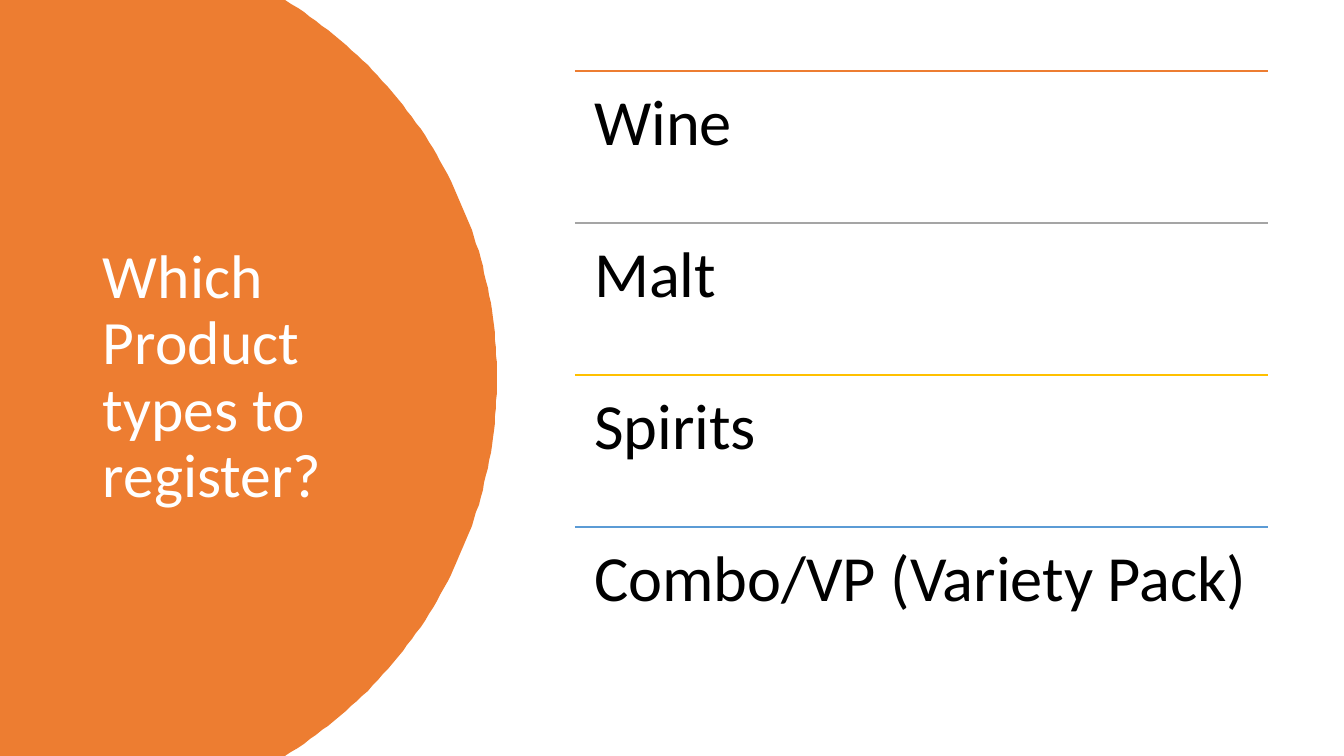
import math

import pptx
import pptx.dml.color
import pptx.enum.shapes
import pptx.enum.text
import pptx.oxml
import pptx.oxml.ns
import pptx.util

EMU_PER_PX = 914400 / 100.8
SLIDE_WIDTH, SLIDE_HEIGHT = 1344, 756


def px(length):
    return pptx.util.Emu(round(length * EMU_PER_PX))


def rgb(code):
    return pptx.dml.color.RGBColor.from_string(code)


def write_text(frame, text, *, size, color, font, spacing=0.9, inset=10, anchor="TOP"):
    frame.word_wrap = True
    frame.vertical_anchor = getattr(pptx.enum.text.MSO_ANCHOR, anchor)
    frame.margin_left = frame.margin_right = px(inset)
    frame.margin_top = frame.margin_bottom = px(inset)
    paragraph = frame.paragraphs[0]
    paragraph.line_spacing = spacing
    run = paragraph.add_run()
    run.text = text
    run.font.name = font
    run.font.size = pptx.util.Pt(size)
    run.font.color.rgb = rgb(color)


class SlideBuilder:
    font = "Calibri"
    accent = "ED7D31"

    def __init__(self, slide):
        self.shapes = slide.shapes

    def outline(self, points, fill):
        builder = self.shapes.build_freeform(*points[0], scale=EMU_PER_PX)
        builder.add_line_segments(points[1:], close=True)
        panel = builder.convert_to_shape()
        panel.shadow.inherit = False
        panel.fill.solid()
        panel.fill.fore_color.rgb = rgb(fill)
        panel.line.fill.background()

    def text(self, left, top, width, height, words, **text_format):
        box = self.shapes.add_textbox(px(left), px(top), px(width), px(height))
        write_text(box.text_frame, words, font=self.font, **text_format)

    def rule(self, left, top, width, color):
        divider = self.shapes.add_connector(
            pptx.enum.shapes.MSO_CONNECTOR.STRAIGHT,
            px(left), px(top), px(left + width), px(top),
        )
        divider.line.color.rgb = rgb(color)
        divider.line.width = pptx.util.Pt(1)
        properties = divider._element.spPr
        properties.append(pptx.oxml.parse_xml(
            f'<a:effectLst {pptx.oxml.ns.nsdecls("a")}/>'
        ))


def round_panel_points(center_x=54, radius=443, steps=120):
    center_y = SLIDE_HEIGHT / 2
    sweep = math.asin(center_y / radius)
    angles = [sweep * (2 * step / steps - 1) for step in range(steps + 1)]
    arc = [
        (center_x + radius * math.cos(angle), center_y + radius * math.sin(angle))
        for angle in angles
    ]
    return [(0, 0), *arc, (0, SLIDE_HEIGHT)]


def main():
    deck = pptx.Presentation()
    deck.slide_width, deck.slide_height = px(SLIDE_WIDTH), px(SLIDE_HEIGHT)
    builder = SlideBuilder(deck.slides.add_slide(deck.slide_layouts[6]))

    builder.outline(round_panel_points(), builder.accent)
    builder.text(93, 71, 326, 614, "Which Product types to register?",
                 size=44, color="FFFFFF", anchor="MIDDLE")

    product_types = [
        ("Wine", builder.accent),
        ("Malt", "A5A5A5"),
        ("Spirits", "FFC000"),
        ("Combo/VP (Variety Pack)", "5B9BD5"),
    ]
    list_left, list_top, list_width, row_height = 575, 71, 693, 152
    for row, (product_type, rule_color) in enumerate(product_types):
        row_top = list_top + row * row_height
        builder.rule(list_left, row_top, list_width, rule_color)
        builder.text(list_left, row_top, list_width, row_height, product_type,
                     size=46, color="000000", inset=19)

    deck.save("out.pptx")


if __name__ == "__main__":
    main()
